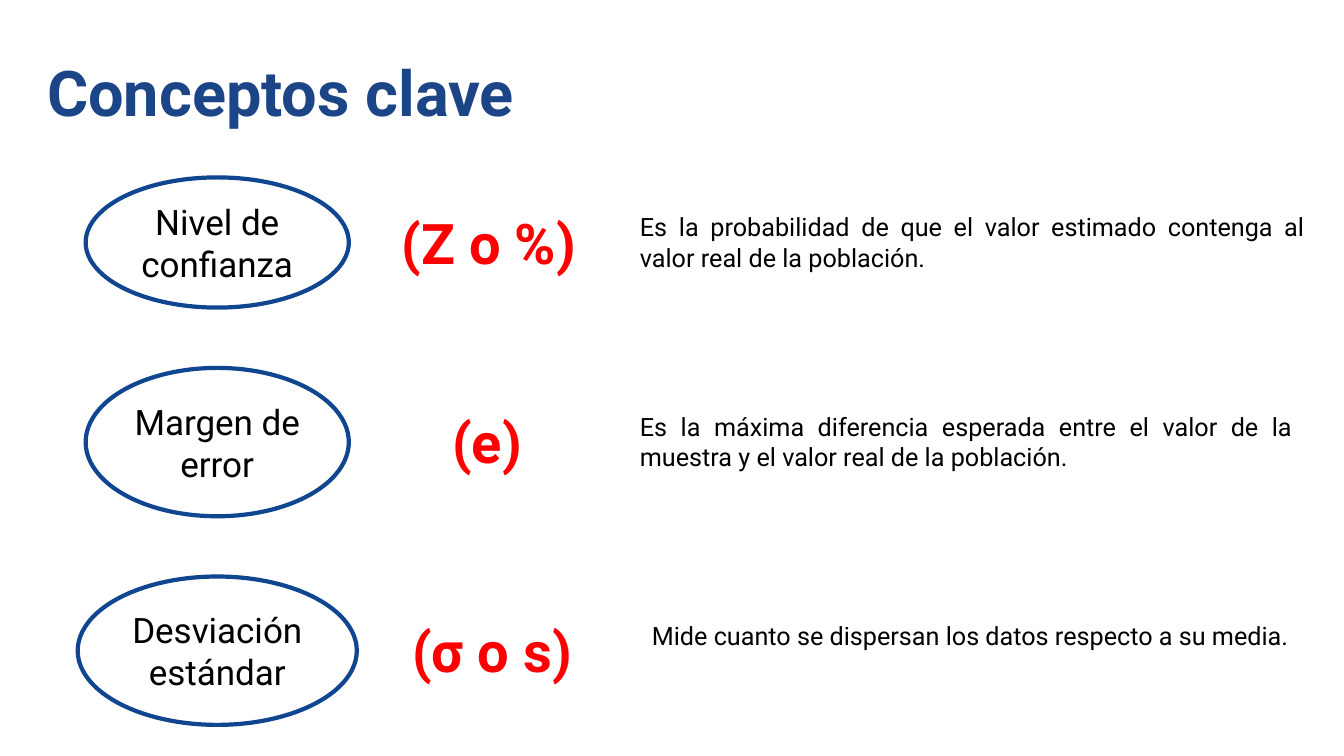
from pptx import Presentation
from pptx import util as u
from pptx.dml.color import RGBColor
from pptx.enum import shapes, text

TITLE = "Conceptos clave"
CONCEPTS = [
    dict(name="Nivel de confianza", symbol="(Z o %)",
         meaning="Es la probabilidad de que el valor estimado contenga al valor real de la población.",
         mid=173.2, oval=(188, 93), symbol_x=(280, 139.7), meaning_x=(450, 489), meaning_h=58.4),
    dict(name="Margen de error", symbol="(e)",
         meaning="Es la máxima diferencia esperada entre el valor de la muestra y el valor real de la población.",
         mid=315.8, oval=(188, 106), symbol_x=(316, 68.4), meaning_x=(450, 480.2), meaning_h=58.4),
    dict(name="Desviación estándar", symbol="(σ o s)",
         meaning="Mide cuanto se dispersan los datos respecto a su media.",
         mid=464.8, oval=(199.4, 106), symbol_x=(287.3, 139.7), meaning_x=(458.6, 480.2), meaning_h=36),
]
THEME = dict(
    font="Roboto", white="FFFFFF", outline="104690", outline_width=3, inset=7.2,
    title=dict(size=45, bold=True, color="1C4587", align="LEFT"),
    name=dict(size=25, bold=False, color="000000", align="CENTER"),
    symbol=dict(size=40, bold=True, color="FF0000", align="LEFT"),
    meaning=dict(size=18, bold=False, color="000000", align="JUSTIFY"),
)
OVAL_MID_X = 155.2
SYMBOL_H = 63.4
MEANING_RISE = 29.2


def write(sp, content, style, anchor="TOP"):
    tf = sp.text_frame
    inset = u.Pt(THEME["inset"])
    frame = dict(word_wrap=True, vertical_anchor=getattr(text.MSO_ANCHOR, anchor),
                 margin_left=inset, margin_right=inset, margin_top=inset, margin_bottom=inset)
    for key, value in frame.items():
        setattr(tf, key, value)
    p = tf.paragraphs[0]
    p.alignment = getattr(text.PP_ALIGN, style["align"])
    r = p.add_run()
    r.text = content
    for key, value in dict(name=THEME["font"], size=u.Pt(style["size"]), bold=style["bold"]).items():
        setattr(r.font, key, value)
    r.font.color.rgb = RGBColor.from_string(style["color"])


def add_text(s, box, content, style):
    sp = s.shapes.add_textbox(*map(u.Pt, box))
    write(sp, content, style)
    sp.text_frame.auto_size = text.MSO_AUTO_SIZE.SHAPE_TO_FIT_TEXT


def add_oval(s, mid, size, content):
    w, h = size
    box = (OVAL_MID_X - w / 2, mid - h / 2, w, h)
    sp = s.shapes.add_shape(shapes.MSO_SHAPE.OVAL, *map(u.Pt, box))
    sp.shadow.inherit = False
    sp.fill.solid()
    sp.fill.fore_color.rgb = RGBColor.from_string(THEME["white"])
    sp.line.color.rgb = RGBColor.from_string(THEME["outline"])
    sp.line.width = u.Pt(THEME["outline_width"])
    write(sp, content, THEME["name"], "MIDDLE")


def main():
    prs = Presentation()
    prs.slide_width, prs.slide_height = u.Pt(960), u.Pt(540)
    s = prs.slides.add_slide(prs.slide_layouts[6])
    add_text(s, (26.6, 31, 921.6, 69), TITLE, THEME["title"])
    for c in CONCEPTS:
        mid = c["mid"]
        add_oval(s, mid, c["oval"], c["name"])
        x, w = c["symbol_x"]
        add_text(s, (x, mid - SYMBOL_H / 2, w, SYMBOL_H), c["symbol"], THEME["symbol"])
        x, w = c["meaning_x"]
        add_text(s, (x, mid - MEANING_RISE, w, c["meaning_h"]), c["meaning"], THEME["meaning"])
    prs.save("out.pptx")


if __name__ == "__main__":
    main()
